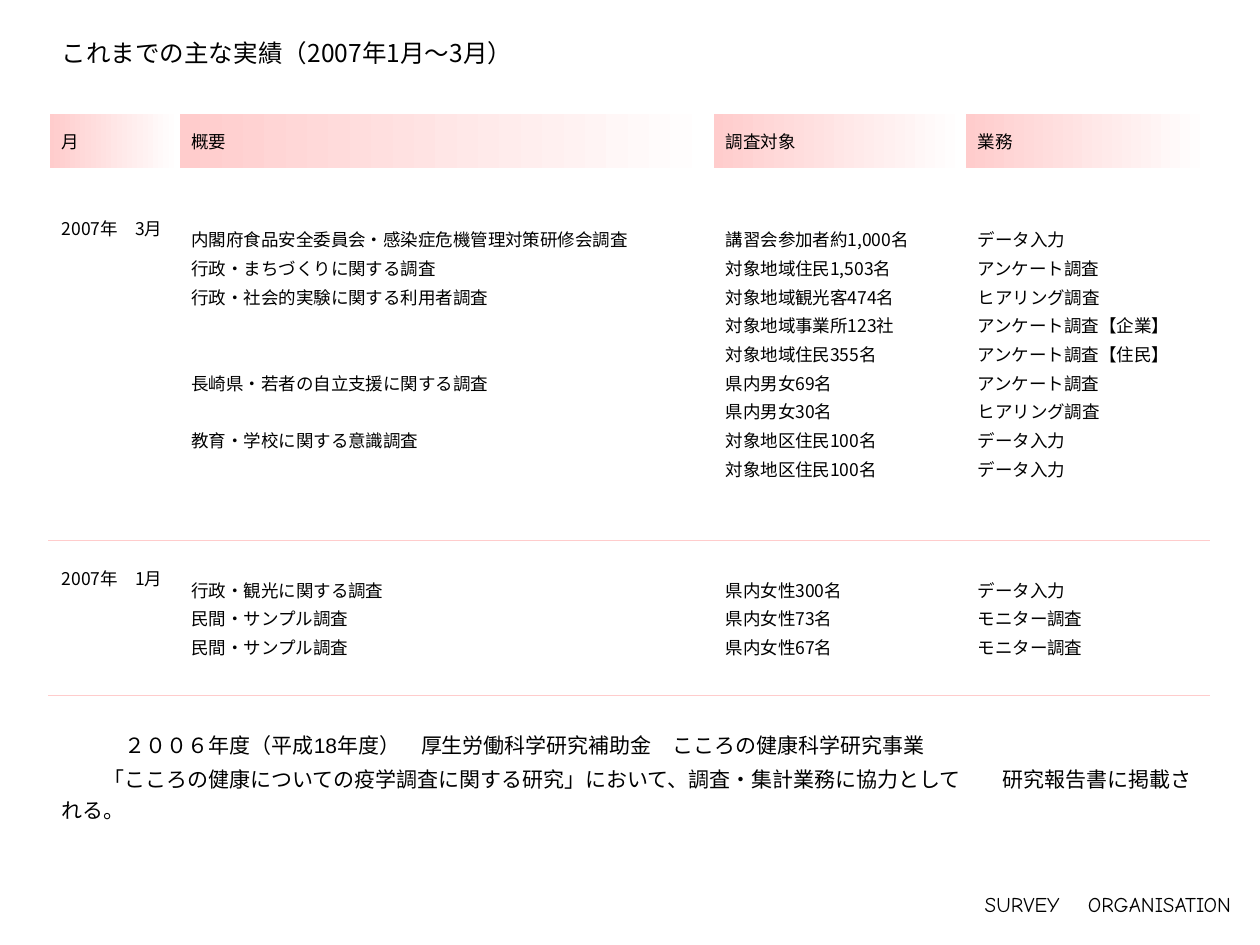
from lxml import etree
from pptx import Presentation
from pptx.dml.color import RGBColor
from pptx.enum.text import MSO_ANCHOR, PP_ALIGN
from pptx.oxml.ns import qn
from pptx.util import Inches, Pt

TOP, MIDDLE = MSO_ANCHOR.TOP, MSO_ANCHOR.MIDDLE
LEFT, RIGHT = PP_ALIGN.LEFT, PP_ALIGN.RIGHT
COLORS = {"text": "000000", "pink": "FFCCCC", "white": "FFFFFF"}
GOTHIC = "Noto Sans CJK JP"
PITCH = 16.4  # points from one line of a list to the next


def write(frame, lines, size=10, font=GOTHIC, align=LEFT, space=0, indents=(), gaps=()):
    """Fill a frame; gaps tells how many line slots stay free above each line."""
    frame.word_wrap = True
    for i, line in enumerate(lines):
        para = frame.paragraphs[0] if i == 0 else frame.add_paragraph()
        para.alignment = align
        if indents:
            para._p.get_or_add_pPr().set("indent", str(Inches(indents[i])))
        free = gaps[i] if gaps else 0
        para.space_before = Pt(space + free * PITCH if i else 0)
        para.space_after = Pt(space)
        run = para.add_run()
        run.text = line
        run.font.size = Pt(size)
        run.font.name = font
        run.font.color.rgb = RGBColor.from_string(COLORS["text"])
        east = etree.SubElement(run.font._element, qn("a:ea"))
        east.set("typeface", GOTHIC)


def edge(cell, top, bottom):
    """Give a cell white sides and the named colours above and below."""
    props = cell._tc.get_or_add_tcPr()
    sides = (("lnL", "white"), ("lnR", "white"), ("lnT", top), ("lnB", bottom))
    for i, (side, color) in enumerate(sides):
        line = etree.Element(qn("a:" + side), w=str(Pt(1)))
        fill = etree.SubElement(line, qn("a:solidFill"))
        etree.SubElement(fill, qn("a:srgbClr"), val=COLORS[color])
        props.insert(i, line)


prs = Presentation()
prs.slide_width, prs.slide_height = Inches(10), Inches(7.5)
slide = prs.slides.add_slide(prs.slide_layouts[5])

title = slide.shapes.title
title.left, title.top = Inches(0.39), Inches(0.22)
title.width, title.height = Inches(9.21), Inches(0.39)
title.text_frame.vertical_anchor = MIDDLE
write(title.text_frame, ["これまでの主な実績（2007年1月～3月）"], size=14)

heads = ["月", "概要", "調査対象", "業務"]
march = [
    ["2007年　3月"],
    ["内閣府食品安全委員会・感染症危機管理対策研修会調査", "行政・まちづくりに関する調査",
     "行政・社会的実験に関する利用者調査", "長崎県・若者の自立支援に関する調査",
     "教育・学校に関する意識調査"],
    ["講習会参加者約1,000名", "対象地域住民1,503名", "対象地域観光客474名",
     "対象地域事業所123社", "対象地域住民355名", "県内男女69名", "県内男女30名",
     "対象地区住民100名", "対象地区住民100名"],
    ["データ入力", "アンケート調査", "ヒアリング調査", "アンケート調査【企業】",
     "アンケート調査【住民】", "アンケート調査", "ヒアリング調査", "データ入力", "データ入力"],
]
january = [
    ["2007年　1月"],
    ["行政・観光に関する調査", "民間・サンプル調査", "民間・サンプル調査"],
    ["県内女性300名", "県内女性73名", "県内女性67名"],
    ["データ入力", "モニター調査", "モニター調査"],
]
notes = [
    "２００６年度（平成18年度）　厚生労働科学研究補助金　こころの健康科学研究事業",
    "「こころの健康についての疫学調査に関する研究」において、調査・集計業務に協力として"
    "　　研究報告書に掲載される。",
]

table = slide.shapes.add_table(
    4, 4, Inches(0.39), Inches(0.9), Inches(9.21), Inches(5.91)).table
table.first_row = table.horz_banding = False
for col, width in zip(table.columns, (1.03, 4.24, 2, 1.94)):
    col.width = Inches(width)
for row, height in zip(table.rows, (0.44, 2.95, 1.23, 1.29)):
    row.height = Inches(height)

for c, head in enumerate(heads):
    cell = table.cell(0, c)
    cell.vertical_anchor = MIDDLE
    write(cell.text_frame, [head])
    cell.fill.gradient()
    cell.fill.gradient_angle = 0
    for stop, color in zip(cell.fill.gradient_stops, ("pink", "white")):
        stop.color.rgb = RGBColor.from_string(COLORS[color])
    edge(cell, "white", "white")

# Each period: row, lists by column, top margin of month and lists, gaps, top edge
periods = [
    (1, march, 0.37, 0.46, (0, 0, 0, 2, 1), "white"),
    (2, january, 0.2, 0.29, (), "pink"),
]
for r, lists, first, rest, gaps, top in periods:
    for c, lines in enumerate(lists):
        cell = table.cell(r, c)
        cell.vertical_anchor = TOP
        cell.margin_top = Inches(rest if c else first)
        cell.fill.background()
        write(cell.text_frame, lines, space=1, gaps=gaps if c == 1 else ())
        edge(cell, top, "pink")

note = table.cell(3, 0)
note.merge(table.cell(3, 3))
note.vertical_anchor = MIDDLE
write(note.text_frame, notes, size=12, font="Arial", space=1.2, indents=(0.5, 0.33))
for c in range(4):
    cell = table.cell(3, c)
    cell.fill.background()
    edge(cell, "pink", "white")

foot = slide.shapes.add_textbox(Inches(6.41), Inches(7.06), Inches(3.46), Inches(0.27))
write(foot.text_frame, ["SURVEY 　ORGANISATION"], size=12, font="Comic Neue", align=RIGHT)
foot.text_frame.paragraphs[0].line_spacing = 0.85

prs.save("out.pptx")
